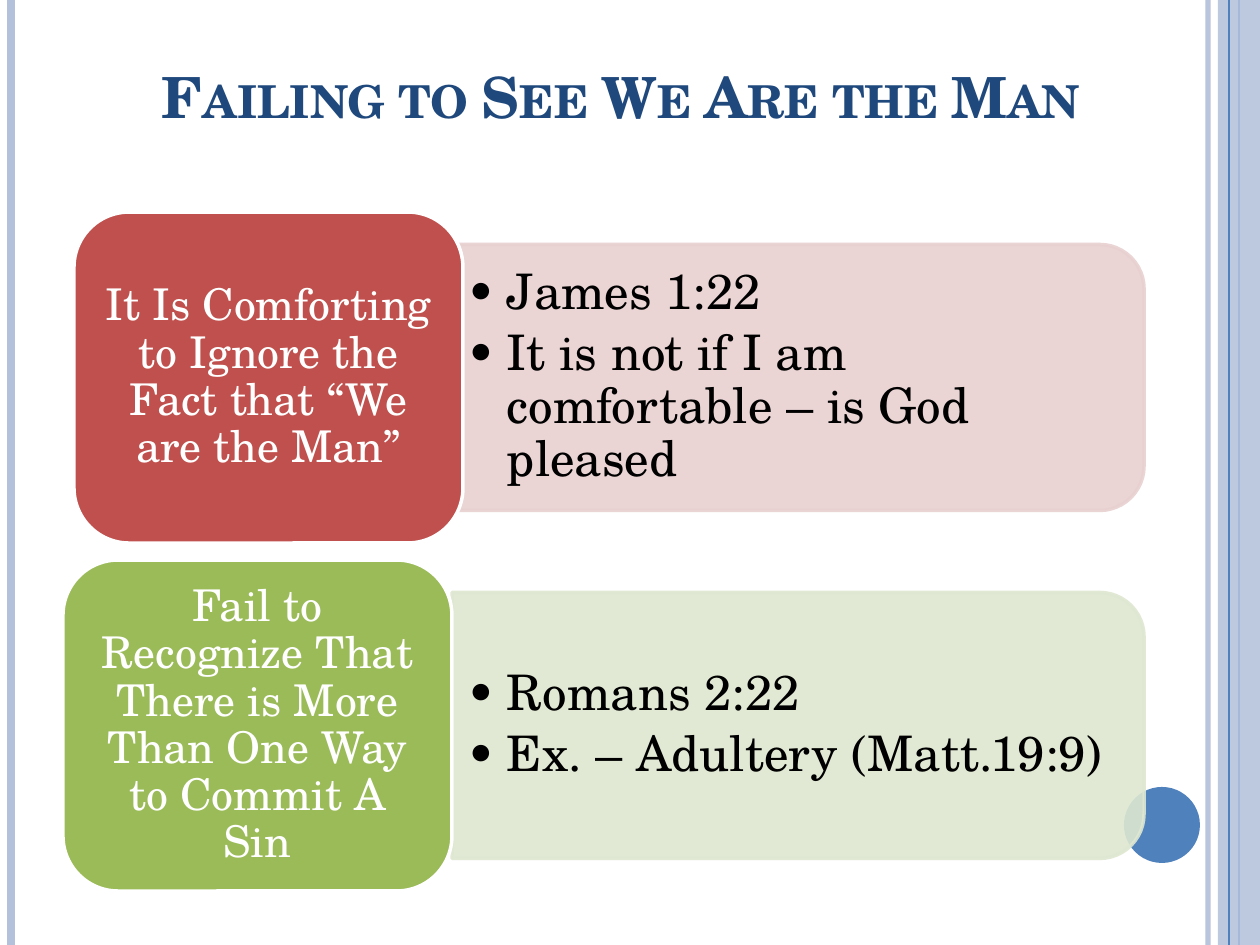
from dataclasses import dataclass

from lxml import etree
from pptx import Presentation
from pptx import util as u
from pptx.dml.color import RGBColor
from pptx.enum import shapes, text
from pptx.oxml.ns import qn

PX = 914400 / 126
FONT = "TeX Gyre Schola"
WHITE = RGBColor(0xFF, 0xFF, 0xFF)
BLACK = RGBColor(0, 0, 0)
NAVY = RGBColor(0x1F, 0x49, 0x7D)
BLUE = RGBColor(0x4F, 0x81, 0xBD)
PALE_BLUE = RGBColor(0xB3, 0xC1, 0xDB)
RED = RGBColor(0xC0, 0x50, 0x4D)
PALE_RED = RGBColor(0xE8, 0xD0, 0xD0)
GREEN = RGBColor(0x9B, 0xBB, 0x59)
PALE_GREEN = RGBColor(0xDE, 0xE7, 0xD1)

SLIDE_W, SLIDE_H = 1260, 945
FIRST_TOP, ROW_PITCH = 212, 348
LABEL_W, LABEL_H = 389, 331
PANEL_LEFT, PANEL_W, PANEL_H = 452, 692, 266
PANEL_TEXT_W, PANEL_TEXT_H = 679, 240
LABEL_INSET_X, LABEL_INSET_Y = 12, 6
PANEL_INSET_X, PANEL_INSET_Y = 15, 8
BULLET_INDENT = 40


@dataclass(frozen=True)
class Rule:
    x: int
    color: RGBColor
    width: float
    alpha: int = 100


@dataclass(frozen=True)
class Row:
    label: str
    points: tuple[str, ...]
    left: int
    color: RGBColor
    pale: RGBColor


RULES_BELOW = (Rule(1208, PALE_BLUE, 3, 93), Rule(11, PALE_BLUE, 4.5), Rule(1239, BLUE, 1.5))
RULE_ABOVE = Rule(1229, BLUE, 0.75)
ROWS = (
    Row("It Is Comforting to Ignore the Fact that “We are the Man”",
        ("James 1:22", "It is not if I am comfortable – is God pleased"),
        74, RED, PALE_RED),
    Row("Fail to Recognize That There is More Than One Way to Commit A Sin",
        ("Romans 2:22", "Ex. – Adultery (Matt.19:9)"),
        63, GREEN, PALE_GREEN),
)


def px(n: float) -> u.Emu:
    return u.Emu(round(n * PX))


def set_alpha(sp, percent: int) -> None:
    """Make every solid colour of a shape's fill and line translucent."""
    for color in sp._element.spPr.iter(qn("a:srgbClr")):
        etree.SubElement(color, qn("a:alpha")).set("val", str(percent * 1000))


def add_rule(s, rule: Rule) -> None:
    line = s.shapes.add_connector(shapes.MSO_CONNECTOR.STRAIGHT,
                                  px(rule.x), 0, px(rule.x), px(SLIDE_H))
    line.line.color.rgb = rule.color
    line.line.width = u.Pt(rule.width)
    if rule.alpha < 100:
        set_alpha(line, rule.alpha)
    etree.SubElement(line._element.spPr, qn("a:effectLst"))


def add_box(s, kind, left: float, top: float, width: int, height: int,
            fill: RGBColor, line: RGBColor | None = None):
    sp = s.shapes.add_shape(kind, px(left), px(top), px(width), px(height))
    sp.shadow.inherit = False
    sp.fill.solid()
    sp.fill.fore_color.rgb = fill
    if line is None:
        sp.line.fill.background()
    else:
        sp.line.color.rgb = line
        sp.line.width = u.Pt(2)
    return sp


def setup_frame(tf, inset_x: int, inset_y: int) -> None:
    tf.word_wrap = True
    tf.vertical_anchor = text.MSO_ANCHOR.MIDDLE
    tf.margin_left = tf.margin_right = px(inset_x)
    tf.margin_top = tf.margin_bottom = px(inset_y)


def add_run(p, words: str, size: float, color: RGBColor):
    r = p.add_run()
    r.text = words
    r.font.name = FONT
    r.font.size = u.Pt(size)
    r.font.color.rgb = color
    return r


def add_bullet(p) -> None:
    pPr = p._p.get_or_add_pPr()
    pPr.set("marL", str(px(BULLET_INDENT)))
    pPr.set("indent", str(-px(BULLET_INDENT)))
    etree.SubElement(pPr, qn("a:buFont")).set("typeface", FONT)
    etree.SubElement(pPr, qn("a:buChar")).set("char", "•")


def add_panel(s, row: Row, middle: float) -> None:
    """Draw the pale panel, a tab shape turned so its round corners face right."""
    sp = add_box(s, shapes.MSO_SHAPE.ROUND_2_SAME_RECTANGLE,
                 PANEL_LEFT + (PANEL_W - PANEL_H) / 2, middle - PANEL_W / 2,
                 PANEL_H, PANEL_W, row.pale, row.pale)
    sp.rotation = 90
    set_alpha(sp, 90)

    box = s.shapes.add_textbox(px(PANEL_LEFT), px(middle - PANEL_TEXT_H / 2),
                               px(PANEL_TEXT_W), px(PANEL_TEXT_H))
    tf = box.text_frame
    setup_frame(tf, PANEL_INSET_X, PANEL_INSET_Y)
    for i, point in enumerate(row.points):
        p = tf.add_paragraph() if i else tf.paragraphs[0]
        add_bullet(p)
        p.line_spacing = 0.9
        p.space_after = u.Pt(4.6)
        add_run(p, point, 28, BLACK)


def add_label(s, row: Row, top: int) -> None:
    sp = add_box(s, shapes.MSO_SHAPE.ROUNDED_RECTANGLE, row.left, top,
                 LABEL_W, LABEL_H, row.color, WHITE)
    setup_frame(sp.text_frame, LABEL_INSET_X, LABEL_INSET_Y)
    p = sp.text_frame.paragraphs[0]
    p.alignment = text.PP_ALIGN.CENTER
    p.line_spacing = 0.9
    add_run(p, row.label, 25, WHITE)


def add_title(s, words: str) -> None:
    title = s.shapes.title
    title.left, title.top, title.width, title.height = px(63), px(-21), px(1029), px(157)
    tf = title.text_frame
    tf.auto_size = text.MSO_AUTO_SIZE.NONE
    tf.vertical_anchor = text.MSO_ANCHOR.BOTTOM
    p = tf.paragraphs[0]
    p.alignment = text.PP_ALIGN.RIGHT
    r = add_run(p, words, 32.4, NAVY)
    r.font.bold = True
    r.font._element.set("cap", "small")


def add_frame(s) -> None:
    for rule in RULES_BELOW:
        add_rule(s, rule)
    band = add_box(s, shapes.MSO_SHAPE.RECTANGLE, 1218, 0, 42, SLIDE_H, PALE_BLUE)
    set_alpha(band, 87)
    add_rule(s, RULE_ABOVE)
    add_box(s, shapes.MSO_SHAPE.OVAL, 1124, 787, 76, 76, BLUE)


def main() -> None:
    prs = Presentation()
    prs.slide_width, prs.slide_height = px(SLIDE_W), px(SLIDE_H)
    s = prs.slides.add_slide(prs.slide_layouts[5])
    add_frame(s)
    add_title(s, "Failing to See We Are the Man")
    for i, row in enumerate(ROWS):
        top = FIRST_TOP + i * ROW_PITCH
        add_panel(s, row, top + LABEL_H / 2)
        add_label(s, row, top)
    prs.save("out.pptx")


if __name__ == "__main__":
    main()
